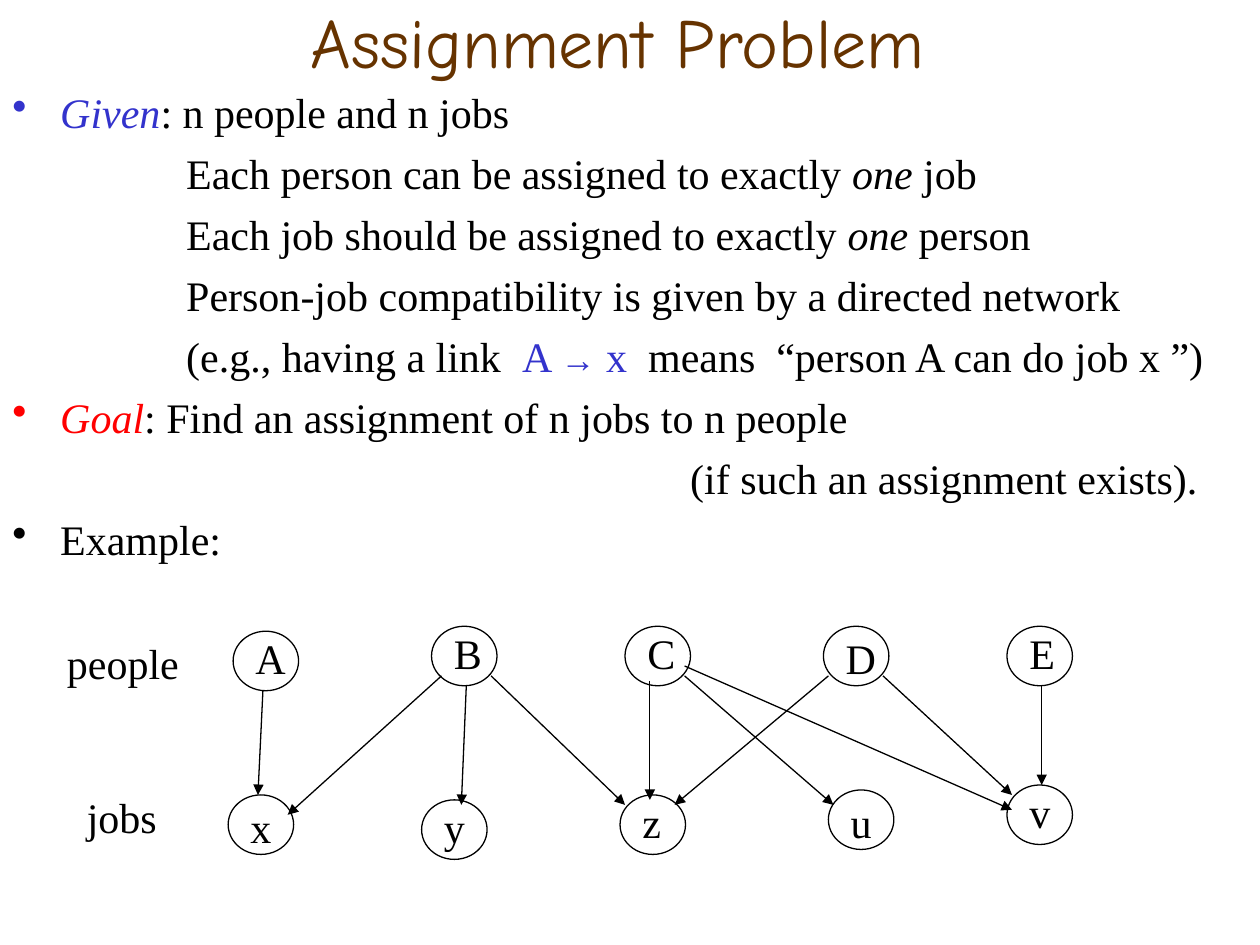
from dataclasses import dataclass
from typing import NamedTuple

from lxml import etree
from pptx import Presentation
from pptx.dml.color import RGBColor
from pptx.enum.shapes import MSO_CONNECTOR, MSO_SHAPE
from pptx.enum.text import MSO_ANCHOR, MSO_AUTO_SIZE, PP_ALIGN
from pptx.oxml.ns import qn
from pptx.util import Inches, Mm, Pt

OVAL, LINE = MSO_SHAPE.OVAL, MSO_CONNECTOR.STRAIGHT
TOP, MID = MSO_ANCHOR.TOP, MSO_ANCHOR.MIDDLE
LEFT, MIDST = PP_ALIGN.LEFT, PP_ALIGN.CENTER
GROW, FIXED = MSO_AUTO_SIZE.SHAPE_TO_FIT_TEXT, MSO_AUTO_SIZE.NONE


@dataclass(frozen=True)
class Theme:
    ink: str = "000000"
    paper: str = "FFFFFF"
    brown: str = "663300"
    blue: str = "3333CC"
    red: str = "FF0000"
    head: int = 40
    text: int = 24
    small: int = 20
    thin: float = 0.75
    gap: int = 6
    serif: str = "Times New Roman"
    comic: str = "Comic Neue"


THEME = Theme()
WIDE, HIGH = Inches(10), Inches(7.5)
CELL = Mm(1)
DROP = 0.25
OVAL_W, OVAL_H = 13.2, 12
NAME_W, NAME_H = 10, 12.7
HANG = 0.38
TAB = 1


class Run(NamedTuple):
    text: str
    color: str = THEME.ink
    slant: bool = False
    size: int = THEME.text


class Item(NamedTuple):
    runs: list[Run]
    tabs: int = 0
    dot: bool = False


class Node(NamedTuple):
    name: str
    col: int
    row: int
    dip: int = -1


class Link(NamedTuple):
    col: int
    row: int
    to_col: int
    to_row: int


class Label(NamedTuple):
    text: str
    col: int
    row: int
    wide: int


ITEMS = [
    Item([Run("Given", THEME.blue, True), Run(": n people and n jobs")], dot=True),
    Item([Run("Each person can be assigned to exactly "), Run("one", slant=True),
          Run(" job")], 1),
    Item([Run("Each job should be assigned to exactly "), Run("one", slant=True),
          Run(" person")], 1),
    Item([Run("Person-job compatibility is given by a directed network")], 1),
    Item([Run("(e.g., having a link  "), Run("A ", THEME.blue),
          Run("→", THEME.blue, size=THEME.small), Run(" x", THEME.blue),
          Run("  means  “person A can do job x ”)")], 1),
    Item([Run("Goal", THEME.red, True),
          Run(": Find an assignment of n jobs to n people")], dot=True),
    Item([Run("(if such an assignment exists).")], 5),
    Item([Run("Example:")], dot=True),
]
NODES = [
    Node("A", 47, 127), Node("B", 87, 126), Node("C", 126, 126),
    Node("D", 166, 126, 0), Node("E", 203, 126),
    Node("x", 46, 160, 0), Node("y", 85, 161), Node("z", 125, 160),
    Node("u", 167, 159, 0), Node("v", 203, 158),
]
LABELS = [Label("people", 11, 127, 34), Label("jobs", 15, 158, 22)]
LINKS = [
    Link(53, 139, 52, 160), Link(89, 136, 58, 164), Link(94, 138, 93, 162),
    Link(99, 136, 126, 162), Link(131, 137, 131, 161), Link(138, 136, 168, 162),
    Link(167, 136, 136, 162), Link(210, 138, 210, 158), Link(178, 136, 204, 160),
    Link(138, 134, 204, 163),
]


def grid(*cells: float) -> list[int]:
    return [round(cell * CELL) for cell in cells]


def tint(code: str) -> RGBColor:
    return RGBColor.from_string(code)


def write(slide, box, items: list[Item], *, font=THEME.serif, align=LEFT,
          anchor=TOP, fit=FIXED, hang=0.0) -> None:
    frame = slide.shapes.add_textbox(*box).text_frame
    frame.word_wrap = True
    frame.auto_size = fit
    frame.vertical_anchor = anchor
    for rank, item in enumerate(items):
        para = frame.add_paragraph() if rank else frame.paragraphs[0]
        para.alignment = align
        para.space_before = Pt(THEME.gap if rank else 0)
        props = para._p.get_or_add_pPr()
        props.set("marL", str(Inches(hang + item.tabs * TAB)))
        props.set("indent", str(Inches(-hang if item.dot else 0)))
        if item.dot:
            etree.SubElement(props, qn("a:buChar")).set("char", "•")
        for part in item.runs:
            run = para.add_run()
            run.text = part.text
            run.font.name = font
            run.font.size = Pt(part.size)
            run.font.italic = part.slant
            run.font.color.rgb = tint(part.color)


def ring(slide, node: Node) -> None:
    oval = slide.shapes.add_shape(
        OVAL, *grid(node.col, node.row + DROP, OVAL_W, OVAL_H))
    oval.shadow.inherit = False
    oval.fill.solid()
    oval.fill.fore_color.rgb = tint(THEME.paper)
    oval.line.color.rgb = tint(THEME.ink)
    oval.line.width = Pt(THEME.thin)


def label(slide, mark: Label) -> None:
    box = grid(mark.col, mark.row + DROP, mark.wide, NAME_H)
    write(slide, box, [Item([Run(mark.text)])], fit=GROW)


def arrow(slide, link: Link) -> None:
    ends = grid(link.col, link.row + DROP, link.to_col, link.to_row + DROP)
    wire = slide.shapes.add_connector(LINE, *ends)
    wire.line.color.rgb = tint(THEME.ink)
    wire.line.width = Pt(THEME.thin)
    tip = etree.SubElement(wire.line._get_or_add_ln(), qn("a:tailEnd"))
    tip.set("type", "triangle")
    etree.SubElement(wire._element.spPr, qn("a:effectLst"))


def main() -> None:
    deck = Presentation()
    deck.slide_width, deck.slide_height = WIDE, HIGH
    slide = deck.slides.add_slide(deck.slide_layouts[6])
    title = Run("Assignment Problem", THEME.brown, size=THEME.head)
    write(slide, grid(11, 0, 227, 16.25), [Item([title])],
          font=THEME.comic, align=MIDST, anchor=MID)
    write(slide, grid(0, 16.25, 254, 174.25), ITEMS, hang=HANG)
    for node in NODES:
        ring(slide, node)
    for node in NODES:
        label(slide, Label(node.name, node.col + 2, node.row + node.dip, NAME_W))
    for mark in LABELS:
        label(slide, mark)
    for link in LINKS:
        arrow(slide, link)
    deck.save("out.pptx")


if __name__ == "__main__":
    main()
